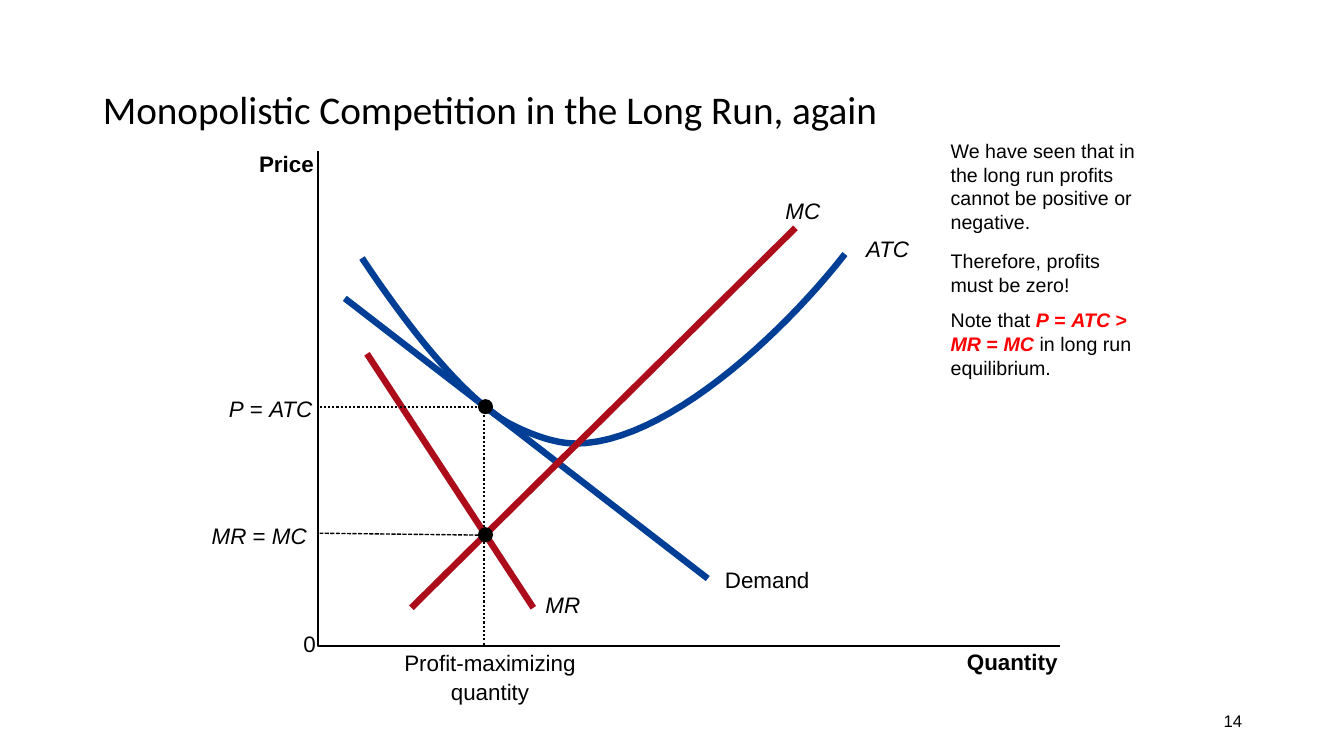
from lxml import etree
from pptx import Presentation
from pptx.dml.color import RGBColor
from pptx.enum import dml, shapes, text
from pptx.oxml.ns import qn
from pptx.util import Inches, Pt

BLACK = RGBColor(0x00, 0x00, 0x00)
BLUE = RGBColor(0x00, 0x3F, 0x95)
CRIMSON = RGBColor(0xAD, 0x0D, 0x1B)
RED = RGBColor(0xFF, 0x00, 0x00)
LEFT, CENTER, RIGHT = text.PP_ALIGN.LEFT, text.PP_ALIGN.CENTER, text.PP_ALIGN.RIGHT
DOTTED, DASHED = dml.MSO_LINE.ROUND_DOT, dml.MSO_LINE.SQUARE_DOT

# Content: a paragraph is a list of runs (words, style letters: b, i, r for red)
TITLE = "Monopolistic Competition in the Long Run, again"
NOTES = [  # top, height, runs
    (1.33, 1.04, [("We have seen that in the long run profits cannot be "
                   "positive or negative.", "")]),
    (2.42, 0.57, [("Therefore, profits must be zero!", "")]),
    (3.01, 0.81, [("Note that ", ""), ("P", "bir"), (" = ", "br"), ("ATC", "bir"),
                  (" > ", "br"), ("MR", "bir"), (" = ", "br"), ("MC ", "bir"),
                  ("in long run equilibrium.", "")]),
]
LABELS = [  # left, top, width, runs
    (9.59, 6.43, 0.91, [("Quantity", "b")]),
    (2.57, 1.49, 0.55, [("Price", "b")]),
    (3.01, 6.25, 0.12, [("0", "")]),
    (7.19, 5.62, 0.85, [("Demand", "")]),
    (5.41, 5.86, 0.35, [("MR", "i")]),
    (8.59, 2.33, 0.44, [("ATC", "i")]),
    (7.79, 1.96, 0.35, [("MC", "i")]),
    (2.27, 3.92, 0.84, [("P", "i"), (" = ", ""), ("ATC", "i")]),
    (2.10, 5.18, 0.96, [("MR", "i"), (" = ", ""), ("MC", "i")]),
]
QUANTITY_LABEL = [[("Profit-maximizing", "")], [("quantity", "")]]

# Geometry of the graph, in inches
ORIGIN = (3.15, 6.41)
AXES = [(3.15, 1.5), ORIGIN, (10.51, 6.41)]
PRICE_GUIDE = [(3.17, 4.04), (4.8, 4.04), (4.8, 6.41)]
DEMAND = ((3.42, 2.96), (7.02, 5.74))
MR = ((3.64, 3.51), (5.29, 6.03))
MC = ((7.89, 2.26), (4.08, 6.03))
MR_MC_GUIDE = ((4.86, 5.31), (3.17, 5.29))
ATC_BEZIERS = [
    ((8.38, 2.52), (7.74, 3.34), (6.58, 4.4), (5.71, 4.4)),
    ((5.71, 4.4), (5.41, 4.4), (5.07, 4.21), (5.03, 4.19)),
    ((5.03, 4.19), (4.52, 3.89), (3.93, 3.07), (3.59, 2.56)),
]
DOTS = [(4.74, 3.96), (4.74, 5.23)]
DOT_SIZE = 0.15
CURVE_WIDTH, AXIS_WIDTH, STEPS = 4.63, 1.5, 24

prs = Presentation()
prs.slide_width, prs.slide_height = Inches(13.33), Inches(7.5)
slide = prs.slides.add_slide(prs.slide_layouts[5])


def write(box, paragraphs, size=16, font="Arial", align=LEFT, anchor=text.MSO_ANCHOR.TOP,
          wrap=False, margins=(0, 0), line_spacing=None, space_after=0):
    frame = box.text_frame
    frame.word_wrap, frame.vertical_anchor = wrap, anchor
    frame.margin_left = frame.margin_right = Inches(margins[0])
    frame.margin_top = frame.margin_bottom = Inches(margins[1])
    for i, runs in enumerate(paragraphs):
        para = frame.add_paragraph() if i else frame.paragraphs[0]
        para.alignment, para.space_after = align, Pt(space_after)
        if line_spacing:
            para.line_spacing = line_spacing
        for words, style in runs:
            run = para.add_run()
            run.text = words
            run.font.size, run.font.name = Pt(size), font
            run.font.bold, run.font.italic = "b" in style, "i" in style
            run.font.color.rgb = RED if "r" in style else BLACK


def text_box(left, top, width, height, paragraphs, **options):
    box = slide.shapes.add_textbox(*map(Inches, (left, top, width, height)))
    write(box, paragraphs, **options)


def style_line(shape, color, width, dash=None):
    shape.line.color.rgb, shape.line.width = color, Pt(width)
    if dash:
        shape.line.dash_style = dash


def straight(ends, color, width, dash=None):
    (x1, y1), (x2, y2) = ends
    line = slide.shapes.add_connector(shapes.MSO_CONNECTOR.STRAIGHT,
                                      *map(Inches, (x1, y1, x2, y2)))
    style_line(line, color, width, dash)
    etree.SubElement(line._element.spPr, qn("a:effectLst"))


def outline(points, color, width, dash=None):
    start, *rest = [(Inches(x), Inches(y)) for x, y in points]
    builder = slide.shapes.build_freeform(*start)
    builder.add_line_segments(rest, close=False)
    shape = builder.convert_to_shape()
    shape.fill.background()
    shape.shadow.inherit = False
    style_line(shape, color, width, dash)


def bezier_point(controls, t):
    weights = ((1 - t) ** 3, 3 * t * (1 - t) ** 2, 3 * t * t * (1 - t), t ** 3)
    return tuple(sum(w * c for w, c in zip(weights, axis)) for axis in zip(*controls))


# Title and slide number
title = slide.shapes.title
title.left, title.top, title.width, title.height = map(Inches, (0.92, 0.4, 11.5, 1.45))
write(title, [[(TITLE, "")]], size=28, font="Calibri", anchor=text.MSO_ANCHOR.MIDDLE,
      wrap=True, margins=(0.1, 0.05), line_spacing=0.8)
text_box(9.42, 6.95, 3, 0.4, [[("14", "")]], size=12, align=RIGHT, wrap=True,
         anchor=text.MSO_ANCHOR.MIDDLE, margins=(0.1, 0.05))

# Axes and curves
outline(AXES, BLACK, AXIS_WIDTH)
straight(DEMAND, BLUE, CURVE_WIDTH)
straight(MR, CRIMSON, CURVE_WIDTH)
atc = [ATC_BEZIERS[0][0]] + [bezier_point(controls, step / STEPS)
                             for controls in ATC_BEZIERS for step in range(1, STEPS + 1)]
outline(atc, BLUE, CURVE_WIDTH)
straight(MC, CRIMSON, CURVE_WIDTH)

# Guides and equilibrium points
outline(PRICE_GUIDE, BLACK, AXIS_WIDTH, DOTTED)
straight(MR_MC_GUIDE, BLACK, 1, DASHED)
for left, top in DOTS:
    dot = slide.shapes.add_shape(shapes.MSO_SHAPE.OVAL,
                                 *map(Inches, (left, top, DOT_SIZE, DOT_SIZE)))
    dot.fill.solid()
    dot.fill.fore_color.rgb = BLACK
    dot.line.fill.background()
    dot.shadow.inherit = False

# Labels and notes
for left, top, width, runs in LABELS:
    text_box(left, top, width, 0.27, [runs])
text_box(4.0, 6.44, 1.72, 0.55, QUANTITY_LABEL, align=CENTER, space_after=1.5)
for top, height, runs in NOTES:
    text_box(9.33, top, 2.08, height, [runs], size=14, wrap=True, margins=(0.1, 0.05))

prs.save("out.pptx")
